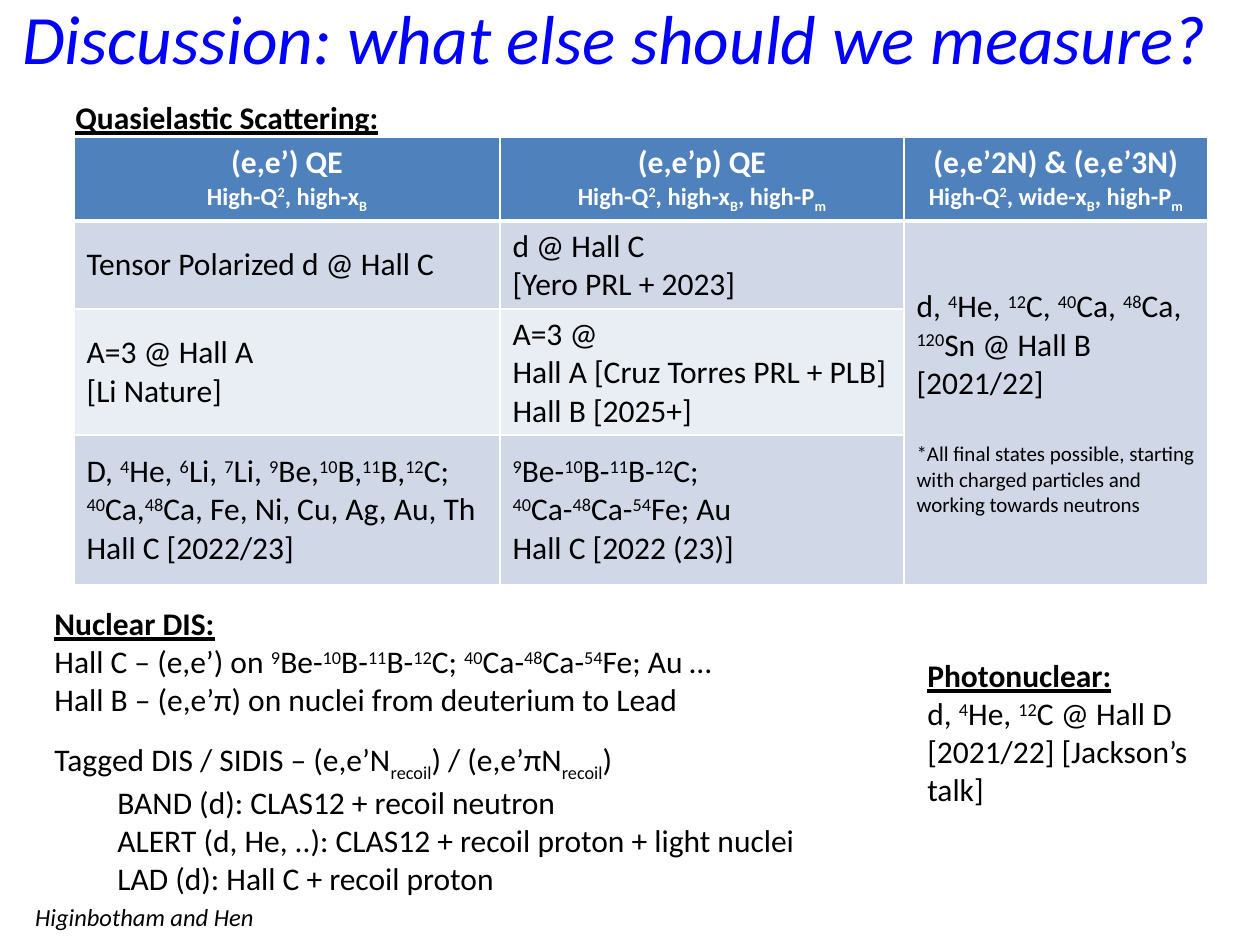
from lxml.etree import SubElement
from pptx import Presentation
from pptx.dml.color import RGBColor
from pptx.enum.text import MSO_ANCHOR, PP_ALIGN
from pptx.oxml.ns import qn
from pptx.util import Emu, Pt

PX = 914400 // 126
FONT = "Calibri"
BLACK, WHITE, BLUE = "000000", "FFFFFF", "0000FF"
HEADER_FILL, ODD_FILL, EVEN_FILL = "4F81BD", "D0D8E8", "E9EDF4"

COLS = [426, 404, 304]
ROWS = [73, 81, 116, 150]
HEADERS = [
    ("(e,e’) QE", "High-Q^2^, high-x~B~"),
    ("(e,e’p) QE", "High-Q^2^, high-x~B~, high-P~m~"),
    ("(e,e’2N) & (e,e’3N)", "High-Q^2^, wide-x~B~, high-P~m~"),
]
BODY = [
    [["Tensor Polarized d @ Hall C"],
     ["d @ Hall C", "[Yero PRL + 2023]"]],
    [["A=3 @ Hall A", "[Li Nature]"],
     ["A=3 @", "Hall A [Cruz Torres PRL + PLB]", "Hall B [2025+]"]],
    [["D, ^4^He, ^6^Li, ^7^Li, ^9^Be,^10^B,^11^B,^12^C;",
      "^40^Ca,^48^Ca, Fe, Ni, Cu, Ag, Au, Th", "Hall C [2022/23]"],
     ["^9^Be-^10^B-^11^B-^12^C;", "^40^Ca-^48^Ca-^54^Fe; Au",
      "Hall C [2022 (23)]"]],
]
HALL_B = "d, ^4^He, ^12^C, ^40^Ca, ^48^Ca, ^120^Sn @ Hall B [2021/22]"
FINAL_STATES = ("*All final states possible, starting with charged particles "
                "and working towards neutrons")
DIS = [
    "Hall C – (e,e’) on ^9^Be-^10^B-^11^B-^12^C; ^40^Ca-^48^Ca-^54^Fe; Au …",
    "Hall B – (e,e’π) on nuclei from deuterium to Lead",
]
TAGGED = "Tagged DIS / SIDIS – (e,e’N~recoil~) / (e,e’πN~recoil~)"
DETECTORS = [
    "BAND (d): CLAS12 + recoil neutron",
    "ALERT (d, He, ..): CLAS12 + recoil proton + light nuclei",
    "LAD (d): Hall C + recoil proton",
]


def px(n):
    return Emu(n * PX)


def rgb(color):
    return RGBColor.from_string(color)


def split_scripts(text):
    """Yield (text, baseline) pairs: ^...^ is raised, ~...~ is lowered."""
    for i, part in enumerate(text.split("^")):
        if i % 2:
            yield part, 30000
            continue
        for j, piece in enumerate(part.split("~")):
            if piece:
                yield piece, -25000 if j % 2 else 0


def add_text(tf, text, size=18, color=BLACK, bold=False, italic=False,
             underline=False, align=PP_ALIGN.LEFT, before=0, indent=0):
    """Write one paragraph, using the empty first one if it is free."""
    first = tf.paragraphs[0]
    p = tf.add_paragraph() if first.runs else first
    p.alignment = align
    if before:
        p.space_before = Pt(before)
    if indent:
        p._p.get_or_add_pPr().set("marL", str(px(indent)))
    for piece, baseline in split_scripts(text):
        r = p.add_run()
        r.text = piece
        f = r.font
        f.name, f.size, f.color.rgb = FONT, Pt(size), rgb(color)
        f.bold, f.italic, f.underline = bold, italic, underline
        if baseline:
            f._element.set("baseline", str(baseline))


def add_box(s, x, y, w, h, wrap=True, anchor=MSO_ANCHOR.TOP):
    tf = s.shapes.add_textbox(px(x), px(y), px(w), px(h)).text_frame
    tf.word_wrap = wrap
    tf.vertical_anchor = anchor
    return tf


def add_heading(tf, text):
    add_text(tf, text, bold=True, underline=True)


def style_cell(cell, fill, bottom=1):
    """Set white borders, then the fill, which must follow them."""
    tc_pr = cell._tc.get_or_add_tcPr()
    for side, width in (("L", 1), ("R", 1), ("T", 1), ("B", bottom)):
        ln = SubElement(tc_pr, qn(f"a:ln{side}"), w=str(Pt(width)))
        solid = SubElement(ln, qn("a:solidFill"))
        SubElement(solid, qn("a:srgbClr"), val=WHITE)
    cell.fill.solid()
    cell.fill.fore_color.rgb = rgb(fill)
    cell.vertical_anchor = MSO_ANCHOR.MIDDLE


def add_scattering_table(s):
    table = s.shapes.add_table(len(ROWS), len(COLS), px(74), px(137),
                               px(sum(COLS)), px(sum(ROWS))).table
    for col, width in zip(table.columns, COLS):
        col.width = px(width)
    for row, height in zip(table.rows, ROWS):
        row.height = px(height)

    # Header row
    for c, (reaction, kinematics) in enumerate(HEADERS):
        cell = table.cell(0, c)
        style_cell(cell, HEADER_FILL, bottom=3)
        for text, size in ((reaction, 18), (kinematics, 14)):
            add_text(cell.text_frame, text, size=size, color=WHITE,
                     bold=True, align=PP_ALIGN.CENTER)

    # Body rows
    for r, cells in enumerate(BODY, 1):
        for c in range(len(COLS)):
            style_cell(table.cell(r, c), ODD_FILL if r % 2 else EVEN_FILL)
        for c, lines in enumerate(cells):
            for line in lines:
                add_text(table.cell(r, c).text_frame, line)

    # Last column spans all body rows
    merged = table.cell(1, 2)
    merged.merge(table.cell(3, 2))
    add_text(merged.text_frame, HALL_B)
    add_text(merged.text_frame, FINAL_STATES, size=12, before=22)


def main():
    prs = Presentation()
    prs.slide_width, prs.slide_height = px(1260), px(945)
    s = prs.slides.add_slide(prs.slide_layouts[6])

    # Footer and title
    tf = add_box(s, 21, 896, 247, 43, wrap=False)
    add_text(tf, "Higinbotham and Hen", size=14, italic=True,
             align=PP_ALIGN.CENTER)
    tf = add_box(s, 10, -16, 1260, 105, anchor=MSO_ANCHOR.MIDDLE)
    add_text(tf, "Discussion: what else should we measure?", size=39.6,
             color=BLUE, italic=True)

    # Quasielastic scattering
    add_scattering_table(s)
    add_heading(add_box(s, 63, 92, 648, 50), "Quasielastic Scattering:")

    # Photonuclear
    tf = add_box(s, 915, 650, 302, 165)
    add_heading(tf, "Photonuclear:")
    add_text(tf, "d, ^4^He, ^12^C @ Hall D [2021/22] [Jackson’s talk]")

    # Nuclear DIS
    tf = add_box(s, 42, 598, 829, 305)
    add_heading(tf, "Nuclear DIS:")
    for line in DIS:
        add_text(tf, line)
    add_text(tf, TAGGED, before=13)
    for line in DETECTORS:
        add_text(tf, line, indent=63)

    prs.save("out.pptx")


if __name__ == "__main__":
    main()
